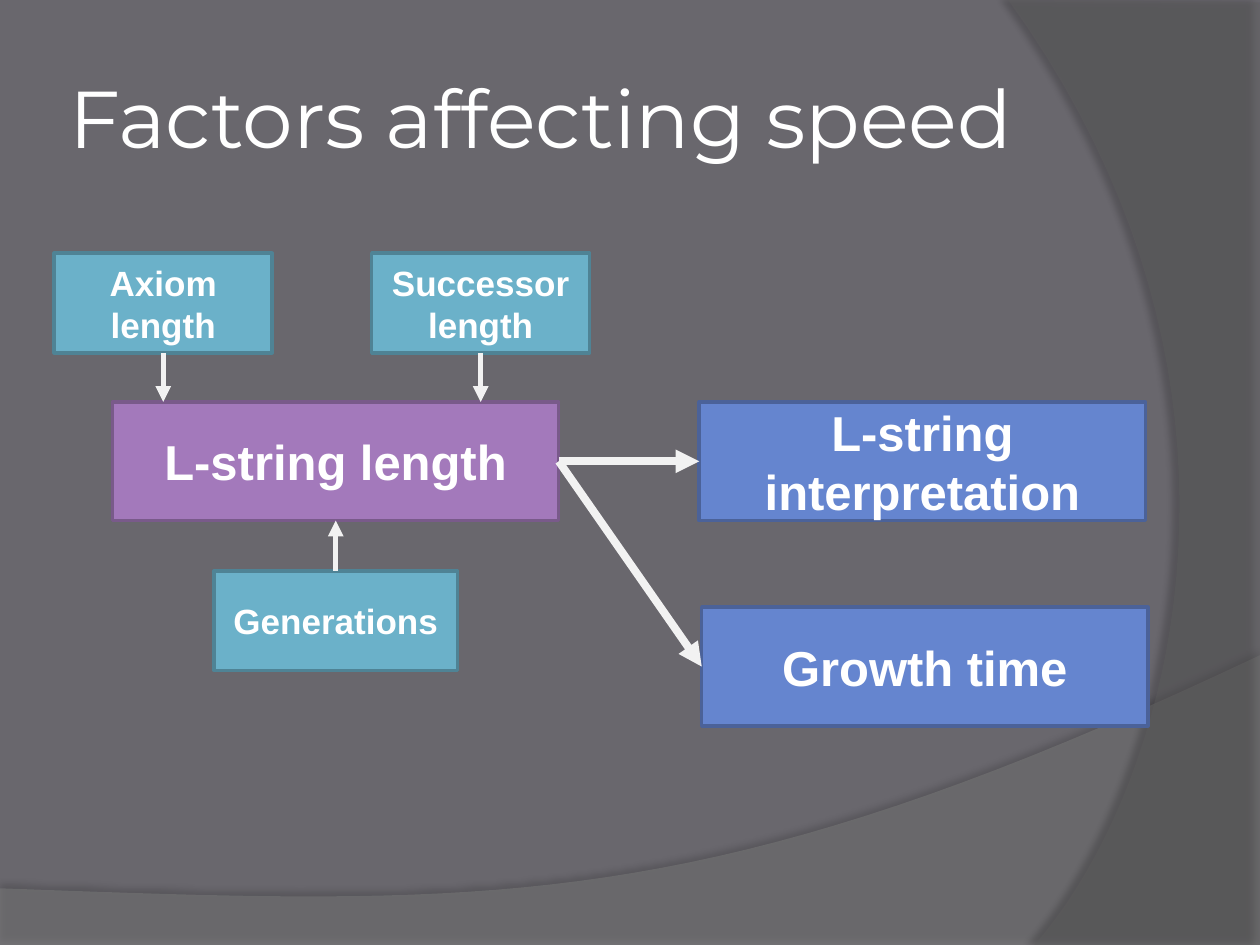
from lxml.etree import SubElement
from pptx import Presentation
from pptx.dml.color import RGBColor
from pptx.enum.shapes import MSO_CONNECTOR as Connector, MSO_SHAPE as Shape
from pptx.enum.text import MSO_ANCHOR as Anchor, PP_ALIGN as Align
from pptx.oxml.ns import qn
from pptx.util import Pt

COLORS = {
    "background": "69676D", "white": "FFFFFF", "arrow": "F2F2F2", "shadow": "000000",
    "hill": "7F7F7F", "side": "5E5E5E",
    "purple": "A379BB", "purple line": "795A8A",
    "teal": "6BB1C9", "teal line": "4F8395",
    "blue": "6585CF", "blue line": "4B6299",
}
WIDTH, HEIGHT = 720, 540
TITLE = "Factors affecting speed"
TITLE_BOX = (36, 21.6, 658.8, 90)

# Size and text size of each kind of box
BIG, SMALL, WIDE = (255, 67.8, 28), (124.6, 56.9, 20), (139, 56.9, 20)
# name: (text, left, top, kind, colour)
BOXES = {
    "length": ("L-string length", 64.3, 229.7, BIG, "purple"),
    "generations": ("Generations", 122.4, 326.2, WIDE, "teal"),
    "axiom": ("Axiom length", 31, 144.7, SMALL, "teal"),
    "successor": ("Successor length", 212.4, 144.7, SMALL, "teal"),
    "interpretation": ("L-string interpretation", 399.6, 229.7, BIG, "blue"),
    "growth": ("Growth time", 401, 347, BIG, "blue"),
}
CAUSES = ["axiom", "successor", "generations"]
EFFECTS = ["interpretation", "growth"]

# Swooshes: corner points, then one cubic curve of four points
SWOOSHES = [
    {"corners": [(0, 540.7), (720, 540.7)],
     "curve": [(720, 374.4), (402.5, 524.9), (281.5, 517.7), (0, 507.6)],
     "color": "hill", "opacity": 45, "shadow": (35, 4, 3.5, 270)},
    {"corners": [(720, 1.4), (720, 540)],
     "curve": [(591.1, 540), (673.2, 445.7), (733, 216), (576, 0)],
     "color": "side", "opacity": 40, "shadow": (45, 4, 4, 180)},
]
CURVE_STEPS = 40


def rgb(name):
    return RGBColor.from_string(COLORS[name])


def curve_points(curve):
    for step in range(CURVE_STEPS + 1):
        t = step / CURVE_STEPS
        weights = ((1 - t) ** 3, 3 * t * (1 - t) ** 2, 3 * t * t * (1 - t), t ** 3)
        yield tuple(sum(w * point[axis] for w, point in zip(weights, curve))
                    for axis in (0, 1))


def set_opacity(color_element, percent):
    SubElement(color_element, qn("a:alpha"), val=str(percent * 1000))


def add_swoosh(page, corners, curve, color, opacity, shadow):
    points = [(Pt(x), Pt(y)) for x, y in [*corners, *curve_points(curve)]]
    builder = page.shapes.build_freeform(*points[0])
    builder.add_line_segments(points[1:], close=True)
    swoosh = builder.convert_to_shape()
    swoosh.fill.solid()
    swoosh.fill.fore_color.rgb = rgb(color)
    swoosh.line.fill.background()
    properties = swoosh.element.spPr
    set_opacity(properties.find(qn("a:solidFill"))[0], opacity)
    strength, blur, distance, angle = shadow
    effects = SubElement(properties, qn("a:effectLst"))
    outer = SubElement(effects, qn("a:outerShdw"), blurRad=str(Pt(blur)),
                       dist=str(Pt(distance)), dir=str(angle * 60000), rotWithShape="0")
    set_opacity(SubElement(outer, qn("a:srgbClr"), val=COLORS["shadow"]), strength)


def write(shape, text, align, font):
    frame = shape.text_frame
    frame.word_wrap = True
    frame.vertical_anchor = Anchor.MIDDLE
    para = frame.paragraphs[0]
    para.alignment = align
    span = para.add_run()
    span.text = text
    span.font.color.rgb = rgb("white")
    for name, value in font.items():
        setattr(span.font, name, value)
    return frame


def add_box(page, text, left, top, kind, color):
    width, height, size = kind
    box = page.shapes.add_shape(Shape.RECTANGLE, *map(Pt, (left, top, width, height)))
    box.shadow.inherit = False
    box.fill.solid()
    box.fill.fore_color.rgb = rgb(color)
    box.line.color.rgb = rgb(color + " line")
    box.line.width = Pt(2)
    write(box, text, Align.CENTER, {"name": "Arial", "size": Pt(size), "bold": True})
    return box


def add_arrow(page, start, end, width):
    arrow = page.shapes.add_connector(Connector.STRAIGHT, *start, *end)
    arrow.line.color.rgb = rgb("arrow")
    arrow.line.width = Pt(width)
    SubElement(arrow.line._get_or_add_ln(), qn("a:tailEnd"), type="triangle")
    SubElement(arrow.element.spPr, qn("a:effectLst"))


def main():
    deck = Presentation()
    deck.slide_width, deck.slide_height = Pt(WIDTH), Pt(HEIGHT)
    page = deck.slides.add_slide(deck.slide_layouts[6])
    page.background.fill.solid()
    page.background.fill.fore_color.rgb = rgb("background")
    for swoosh in SWOOSHES:
        add_swoosh(page, **swoosh)

    title = page.shapes.add_textbox(*map(Pt, TITLE_BOX))
    frame = write(title, TITLE, Align.LEFT, {"name": "Montserrat", "size": Pt(46)})
    for side in ("left", "right", "top", "bottom"):
        setattr(frame, "margin_" + side, Pt(3.6))

    boxes = {name: add_box(page, *box) for name, box in BOXES.items()}
    hub = boxes["length"]
    for name in CAUSES:
        box = boxes[name]
        x = box.left + box.width // 2
        if box.top < hub.top:
            start, end = box.top + box.height, hub.top
        else:
            start, end = box.top, hub.top + hub.height
        add_arrow(page, (x, start), (x, end), 3)
    for name in EFFECTS:
        box = boxes[name]
        start = (hub.left + hub.width, hub.top + hub.height // 2)
        add_arrow(page, start, (box.left, box.top + box.height // 2), 4.5)
    deck.save("out.pptx")


if __name__ == "__main__":
    main()
